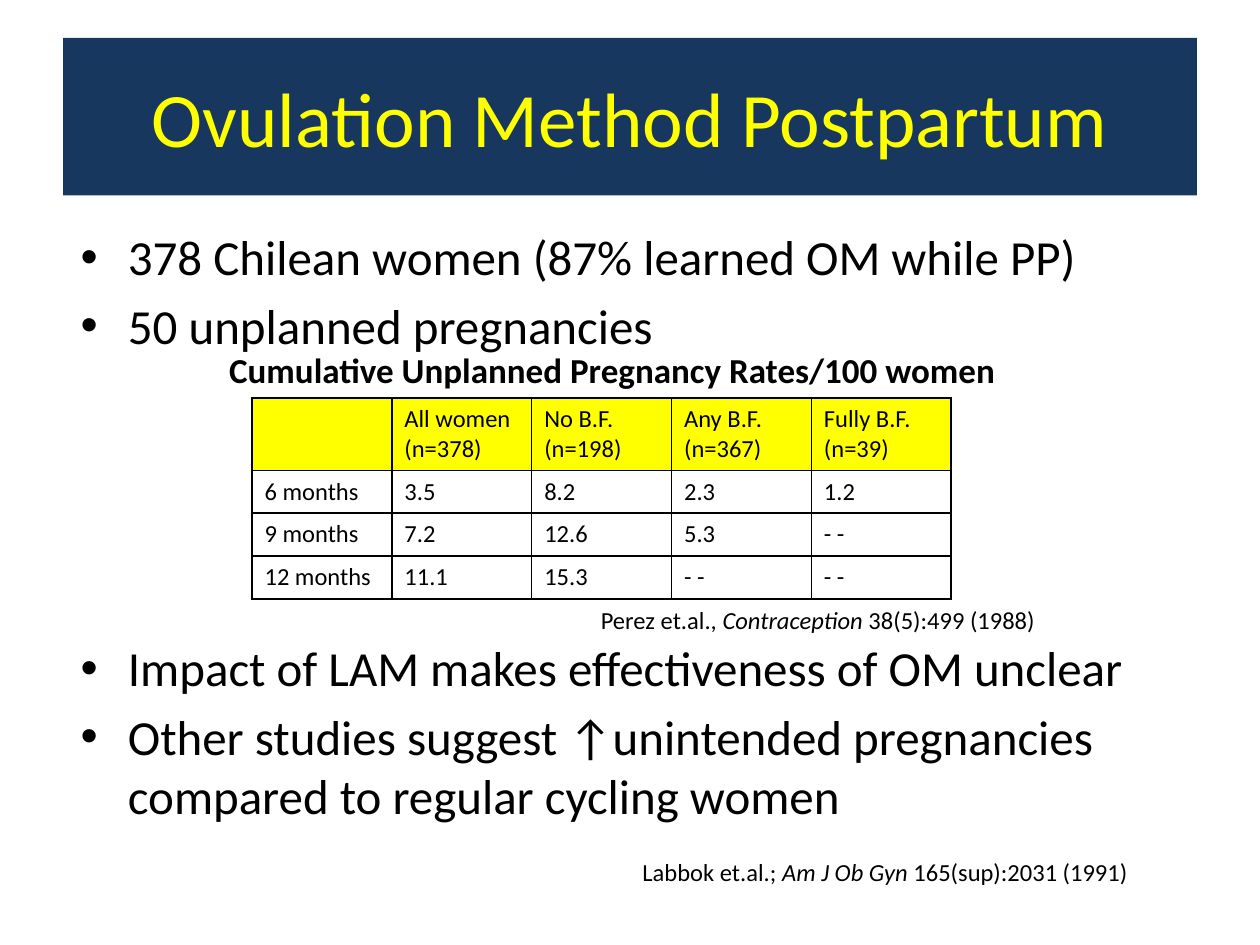
from lxml.etree import SubElement
from pptx import Presentation
from pptx.dml.color import RGBColor
from pptx.enum.text import MSO_ANCHOR, MSO_AUTO_SIZE, PP_ALIGN
from pptx.oxml.ns import qn
from pptx.util import Inches, Pt

NAVY = RGBColor(0x17, 0x37, 0x5E)
YELLOW = RGBColor(0xFF, 0xFF, 0x00)
BLACK = RGBColor(0x00, 0x00, 0x00)

RATES = [
    ["", "All women\n(n=378)", "No B.F.\n(n=198)", "Any B.F.\n(n=367)", "Fully B.F.\n(n=39)"],
    ["6 months", "3.5", "8.2", "2.3", "1.2"],
    ["9 months", "7.2", "12.6", "5.3", "- -"],
    ["12 months", "11.1", "15.3", "- -", "- -"],
]


def write(paragraph, text, size=14, color=BLACK, bold=False, italic=False, font="Calibri"):
    """Add one formatted run to a paragraph."""
    run = paragraph.add_run()
    run.text = text
    run.font.name = font
    run.font.size = Pt(size)
    run.font.color.rgb = color
    run.font.bold = bold
    run.font.italic = italic


def border(cell, width=1, color=BLACK):
    """Draw a solid line on all four sides of a table cell."""
    properties = cell._tc.get_or_add_tcPr()
    for side in ("a:lnL", "a:lnR", "a:lnT", "a:lnB"):
        line = SubElement(properties, qn(side), w=str(Pt(width)))
        fill = SubElement(line, qn("a:solidFill"))
        SubElement(fill, qn("a:srgbClr"), val=str(color))


class SlideBuilder:
    def __init__(self, deck):
        self.slide = deck.slides.add_slide(deck.slide_layouts[1])

    def place(self, shape, left, top, width, height):
        shape.left, shape.top = Inches(left), Inches(top)
        shape.width, shape.height = Inches(width), Inches(height)
        return shape.text_frame

    def title(self, text, *box):
        heading = self.slide.shapes.title
        frame = self.place(heading, *box)
        heading.fill.solid()
        heading.fill.fore_color.rgb = NAVY
        frame.vertical_anchor = MSO_ANCHOR.MIDDLE
        frame.paragraphs[0].alignment = PP_ALIGN.CENTER
        write(frame.paragraphs[0], text, size=44, color=YELLOW)

    def bullets(self, items, *box):
        """Items are (text, space before in points or None for the template's)."""
        frame = self.place(self.slide.placeholders[1], *box)
        frame.auto_size = MSO_AUTO_SIZE.NONE
        for index, (text, gap) in enumerate(items):
            point = frame.add_paragraph() if index else frame.paragraphs[0]
            if gap:
                point.space_before = Pt(gap)
            write(point, text, size=28)

    def label(self, runs, *box, **style):
        """Runs are (text, italic) pairs on one line."""
        frame = self.slide.shapes.add_textbox(*map(Inches, box)).text_frame
        frame.word_wrap = True
        for text, italic in runs:
            write(frame.paragraphs[0], text, italic=italic, **style)

    def table(self, rows, left, top, column_width, row_heights):
        columns = len(rows[0])
        table = self.slide.shapes.add_table(
            len(rows), columns, Inches(left), Inches(top),
            Inches(column_width * columns), Inches(sum(row_heights))).table
        table.first_row = table.horz_banding = False
        for column in table.columns:
            column.width = Inches(column_width)
        for r, values in enumerate(rows):
            table.rows[r].height = Inches(row_heights[r])
            for c, value in enumerate(values):
                self.cell(table.cell(r, c), value, header=r == 0)

    def cell(self, cell, value, header):
        border(cell)
        if header:
            cell.fill.solid()
            cell.fill.fore_color.rgb = YELLOW
        else:
            cell.fill.background()
        frame = cell.text_frame
        for index, text in enumerate(value.split("\n")):
            line = frame.add_paragraph() if index else frame.paragraphs[0]
            if text:
                write(line, text)


def main():
    deck = Presentation()
    deck.slide_width, deck.slide_height = Inches(10), Inches(7.5)
    page = SlideBuilder(deck)

    # Title band and bullets, with room for the table before the third bullet
    page.title("Ovulation Method Postpartum", 0.5, 0.3, 9, 1.25)
    page.bullets([
        ("378 Chilean women (87% learned OM while PP)", None),
        ("50 unplanned pregnancies", None),
        ("Impact of LAM makes effectiveness of OM unclear", 162),
        ("Other studies suggest ↑unintended pregnancies compared to regular cycling women", None),
    ], 0.54, 1.75, 9.27, 5.5)

    # Pregnancy rates
    page.table(RATES, 2, 3.16, 1.11, [0.57, 0.34, 0.34, 0.34])
    page.label([("Cumulative Unplanned Pregnancy Rates/100 women", False)],
               1.72, 2.72, 6.42, 0.44, size=20, bold=True)

    # Citations
    page.label([("Perez et.al., ", False), ("Contraception", True),
                (" 38(5):499 (1988)", False)], 4.67, 4.75, 4.81, 0.34)
    page.label([("Labbok et.al.; ", False), ("Am J Ob Gyn ", True),
                ("165(sup):2031 (1991)", False)], 5, 6.75, 4.81, 0.34)

    deck.save("out.pptx")


if __name__ == "__main__":
    main()
